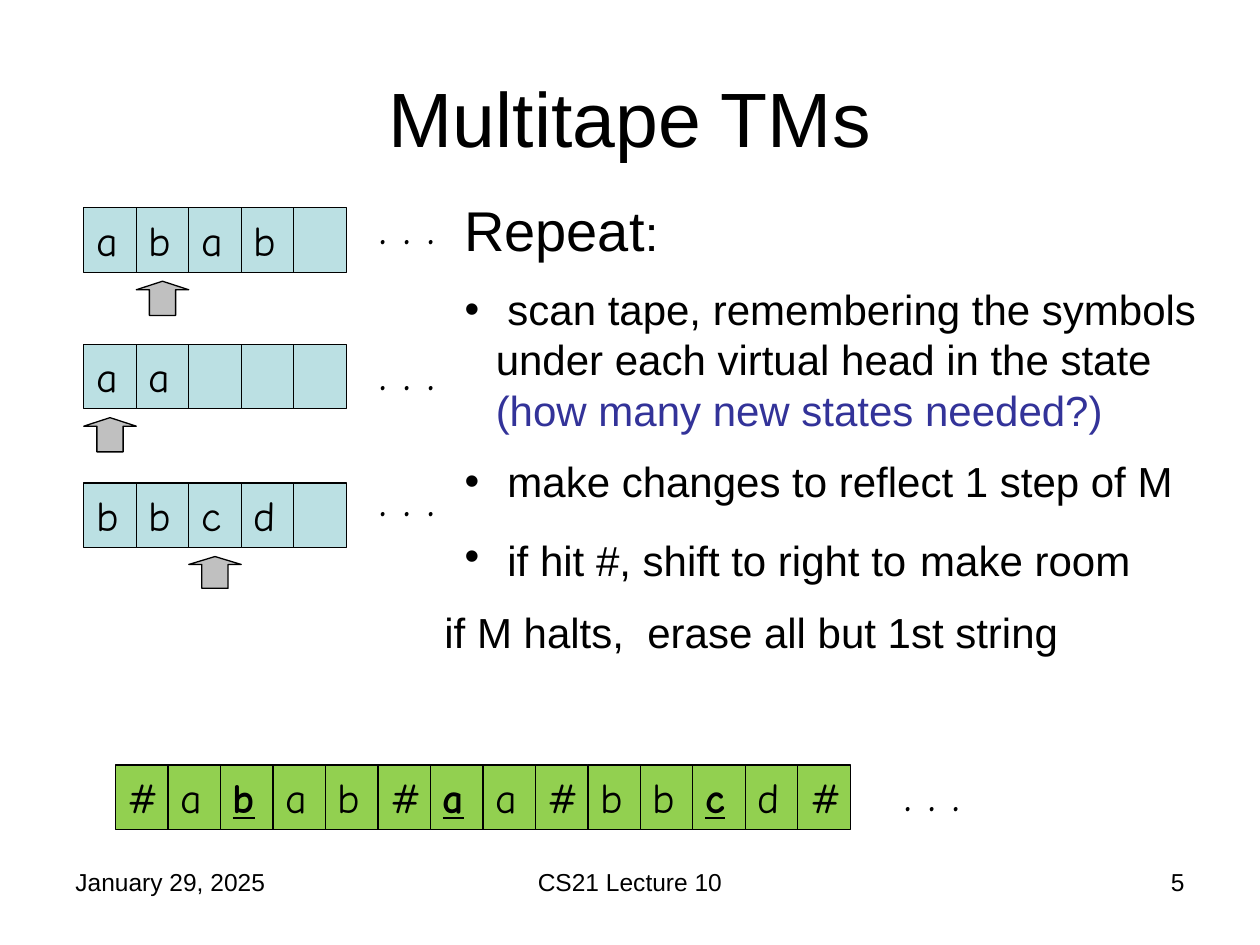
from lxml import etree
from pptx import Presentation
from pptx.dml.color import RGBColor
from pptx.enum.shapes import MSO_SHAPE
from pptx.enum.text import MSO_ANCHOR, MSO_AUTO_SIZE, PP_ALIGN
from pptx.oxml.ns import qn
from pptx.util import Cm, Pt

RECTANGLE, UP_ARROW = MSO_SHAPE.RECTANGLE, MSO_SHAPE.UP_ARROW
TOP, MIDDLE = MSO_ANCHOR.TOP, MSO_ANCHOR.MIDDLE
LEFT, CENTER, RIGHT = PP_ALIGN.LEFT, PP_ALIGN.CENTER, PP_ALIGN.RIGHT
GROW, FIXED = MSO_AUTO_SIZE.SHAPE_TO_FIT_TEXT, MSO_AUTO_SIZE.NONE

COLORS = {"ink": "000000", "question": "333399", "tape": "BBE0E3",
          "single_tape": "92D050", "head": "C0C0C0"}
SANS, HAND = "Arial", "Comic Neue"
CELL_WIDTH, CELL_HEIGHT = 1.058, 1.3


def assign(target, **values):
    """Set each given attribute on the target."""
    for name, value in values.items():
        setattr(target, name, value)


def place(shape, box):
    """Move a shape to a box of left, top, width and height in cm."""
    assign(shape, **dict(zip(("left", "top", "width", "height"), map(Cm, box))))


def write(paragraph, text, size, font=SANS, color="ink", **emphasis):
    """Add a formatted run to a paragraph."""
    run = paragraph.add_run()
    run.text = text
    assign(run.font, size=Pt(size), name=font, **emphasis)
    run.font.color.rgb = RGBColor.from_string(COLORS[color])


def add_label(slide, box, text, size, font=SANS, align=LEFT, before=0):
    """Add a wrapped text box with one line of text."""
    label = slide.shapes.add_textbox(*map(Cm, box))
    label.text_frame.word_wrap = True
    paragraph = label.text_frame.paragraphs[0]
    assign(paragraph, alignment=align, space_before=Pt(before))
    write(paragraph, text, size, font)


def add_block(slide, kind, box, color):
    """Add a preset shape with a thin black outline."""
    block = slide.shapes.add_shape(kind, *map(Cm, box))
    block.shadow.inherit = False
    block.fill.solid()
    block.fill.fore_color.rgb = RGBColor.from_string(COLORS[color])
    block.line.color.rgb = RGBColor.from_string(COLORS["ink"])
    block.line.width = Pt(0.75)
    return block


def add_tape(slide, left, top, symbols, color, marked=()):
    """Draw a row of tape cells, with marked symbols bold and underlined."""
    for index, symbol in enumerate(symbols):
        box = (left + index * CELL_WIDTH, top, CELL_WIDTH, CELL_HEIGHT)
        frame = add_block(slide, RECTANGLE, box, color).text_frame
        if symbol.strip():
            assign(frame, vertical_anchor=TOP, auto_size=GROW, word_wrap=True)
            paragraph = frame.paragraphs[0]
            assign(paragraph, alignment=LEFT, space_before=Pt(12))
            emphasis = {"bold": True, "underline": True} if index in marked else {}
            write(paragraph, symbol, 24, HAND, **emphasis)


def add_dots(slide, left, top, width):
    """Show that a tape goes on."""
    add_label(slide, (left, top, width, 1.45), ". . .", 28, HAND, before=14)


def add_headed_tape(slide, left, top, symbols, head, head_height, dots_top):
    """Draw a tape with its read head and continuation dots."""
    add_tape(slide, left, top, symbols, "tape")
    head_box = (left + head * CELL_WIDTH, top + 1.48, CELL_WIDTH, head_height)
    arrow = add_block(slide, UP_ARROW, head_box, "head")
    arrow.adjustments[0], arrow.adjustments[1] = 0.5, 0.25
    add_dots(slide, left + 5.72, dots_top, 4.01)


def add_title(slide, box):
    """Fill the title placeholder."""
    title = slide.shapes.title
    place(title, box)
    title.text_frame.vertical_anchor = MIDDLE
    paragraph = title.text_frame.paragraphs[0]
    paragraph.alignment = CENTER
    write(paragraph, "Multitape TMs", 44)


def set_bullet(paragraph, margin, indent, bullet=None):
    """Set the indents of a paragraph and its bullet, if any."""
    properties = paragraph._p.get_or_add_pPr()
    properties.set("marL", str(Cm(margin)))
    properties.set("indent", str(Cm(indent)))
    if bullet:
        etree.SubElement(properties, qn("a:buFont"), typeface=SANS)
        etree.SubElement(properties, qn("a:buChar"), char=bullet)
    else:
        etree.SubElement(properties, qn("a:buNone"))


def add_steps(slide, box):
    """Fill the body placeholder with the steps of the simulation."""
    body = slide.placeholders[1]
    place(body, box)
    frame = body.text_frame
    assign(frame, auto_size=FIXED, word_wrap=True, vertical_anchor=TOP)
    step, plain = (1.27, -0.63, "•"), (0, 0)
    steps = [
        (0, (0.63, 0), 16, [("Repeat", 32), (":", 28)]),
        (1, step, 12, [(" scan tape, remembering the symbols under each "
                        "virtual head in the state ", 24),
                       ("(how many new states needed?)", 24, SANS, "question")]),
        (1, step, 12, [(" make changes to reflect 1 step of M", 24)]),
        (1, step, 12, [(" if hit #, shift to right to", 24), (" ", 28),
                       ("make room", 24)]),
        (0, plain, 12, [(" if M halts,  erase all but 1st string", 24)]),
    ]
    for index, (level, bullet, before, runs) in enumerate(steps):
        paragraph = frame.add_paragraph() if index else frame.paragraphs[0]
        assign(paragraph, level=level, alignment=LEFT, space_before=Pt(before))
        set_bullet(paragraph, *bullet)
        for run in runs:
            write(paragraph, *run)


def add_footer(slide, top, height):
    """Add the date, the lecture name and the page number."""
    for left, width, text, align in ((1.27, 5.93, "January 29, 2025", LEFT),
                                     (8.68, 8.04, "CS21 Lecture 10", CENTER),
                                     (18.2, 5.93, "5", RIGHT)):
        add_label(slide, (left, top, width, height), text, 14, align=align)


def main():
    """Build the slide and save it."""
    deck = Presentation()
    assign(deck, slide_width=Cm(25.4), slide_height=Cm(19.05))
    slide = deck.slides.add_slide(deck.slide_layouts[1])
    add_title(slide, (1.27, 0.76, 22.86, 3.18))
    for top, symbols, head, head_height, dots_top in (
            (4.19, "abab ", 1, 0.69, 3.81),
            (6.94, "aa   ", 0, 0.69, 6.77),
            (9.74, "bbcd ", 2, 0.64, 9.31)):
        add_headed_tape(slide, 1.69, top, symbols, head, head_height, dots_top)
    add_tape(slide, 2.33, 15.42, "#abab#aa#bbcd#", "single_tape", (2, 6, 11))
    add_dots(slide, 17.99, 15.24, 2.33)
    add_steps(slide, (8.47, 3.81, 16.3, 9.98))
    add_footer(slide, 17.36, 1.32)
    deck.save("out.pptx")


if __name__ == "__main__":
    main()
